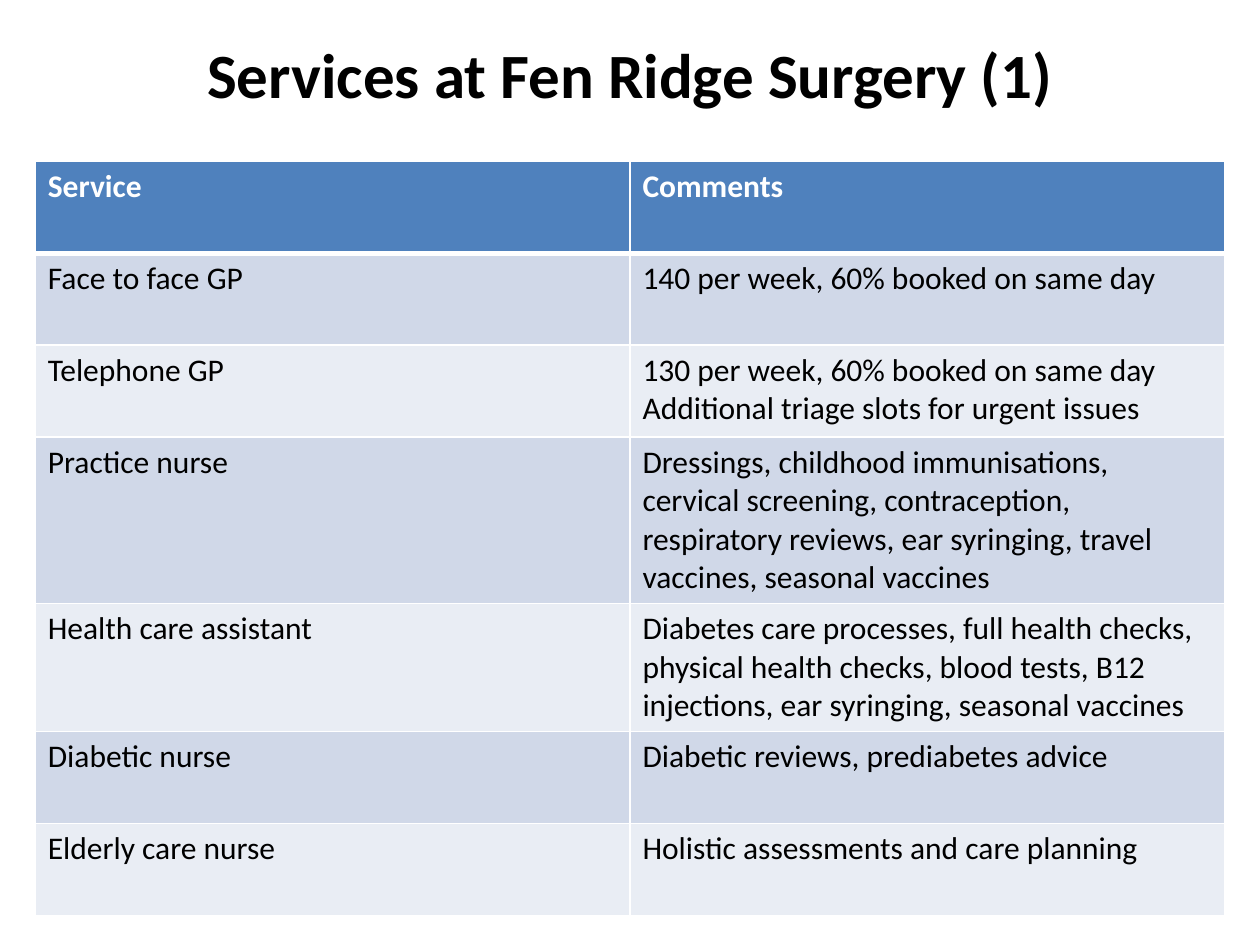
import pptx
import pptx.util
import pptx.dml.color
import pptx.enum.text
import pptx.oxml.ns
from lxml import etree
from pptx.util import Inches, Pt

TITLE = "Services at Fen Ridge Surgery (1)"
ROWS = [
    ("Service", "Comments"),
    ("Face to face GP", "140 per week, 60% booked on same day"),
    ("Telephone GP", "130 per week, 60% booked on same day\n"
                     "Additional triage slots for urgent issues"),
    ("Practice nurse", "Dressings, childhood immunisations, cervical screening, "
                       "contraception, respiratory reviews, ear syringing, "
                       "travel vaccines, seasonal vaccines"),
    ("Health care assistant", "Diabetes care processes, full health checks, "
                              "physical health checks, blood tests, B12 injections, "
                              "ear syringing, seasonal vaccines"),
    ("Diabetic nurse", "Diabetic reviews, prediabetes advice"),
    ("Elderly care nurse", "Holistic assessments and care planning"),
]
HEADER_FILL, BANDS = "4F81BD", ("E9EDF4", "D0D8E8")
COL_W, ROW_H = 4.72, 0.73


def rgb(value):
    return pptx.dml.color.RGBColor.from_string(value)


def format_text(tf, size, color, bold):
    for p in tf.paragraphs:
        for r in p.runs:
            r.font.name = "Calibri"
            r.font.size = Pt(size)
            r.font.bold = bold
            r.font.color.rgb = rgb(color)


def add_borders(cell, widths):
    """Draw white cell borders; widths maps each side to points."""
    tc_pr = cell._tc.get_or_add_tcPr()
    for side, width in widths.items():
        ln = etree.SubElement(tc_pr, pptx.oxml.ns.qn("a:ln" + side), w=str(Pt(width)))
        fill = etree.SubElement(ln, pptx.oxml.ns.qn("a:solidFill"))
        etree.SubElement(fill, pptx.oxml.ns.qn("a:srgbClr"), val="FFFFFF")


prs = pptx.Presentation()
prs.slide_width, prs.slide_height = Inches(10), Inches(7.5)
s = prs.slides.add_slide(prs.slide_layouts[5])

# Title
title = s.shapes.title
title.left, title.top = Inches(0.5), Inches(-0.19)
title.width, title.height = Inches(9), Inches(1.25)
tf = title.text_frame
tf.text = TITLE
tf.vertical_anchor = pptx.enum.text.MSO_ANCHOR.MIDDLE
tf.paragraphs[0].alignment = pptx.enum.text.PP_ALIGN.CENTER
tf.paragraphs[0].line_spacing = 1.5
format_text(tf, 36, "000000", True)

# Services table: rows with long comments grow to fit
table = s.shapes.add_table(len(ROWS), 2, Inches(0.28), Inches(1.28),
                           Inches(2 * COL_W), Inches(len(ROWS) * ROW_H)).table
for column in table.columns:
    column.width = Inches(COL_W)
for i, texts in enumerate(ROWS):
    header = i == 0
    table.rows[i].height = Inches(ROW_H)
    for j, text in enumerate(texts):
        cell = table.cell(i, j)
        cell.text_frame.text = text
        format_text(cell.text_frame, 18, "FFFFFF" if header else "000000", header)
        add_borders(cell, {"L": 1, "R": 1, "T": 3 if i == 1 else 1,
                           "B": 3 if header else 1})
        cell.fill.solid()
        cell.fill.fore_color.rgb = rgb(HEADER_FILL if header else BANDS[i % 2])

prs.save("out.pptx")
